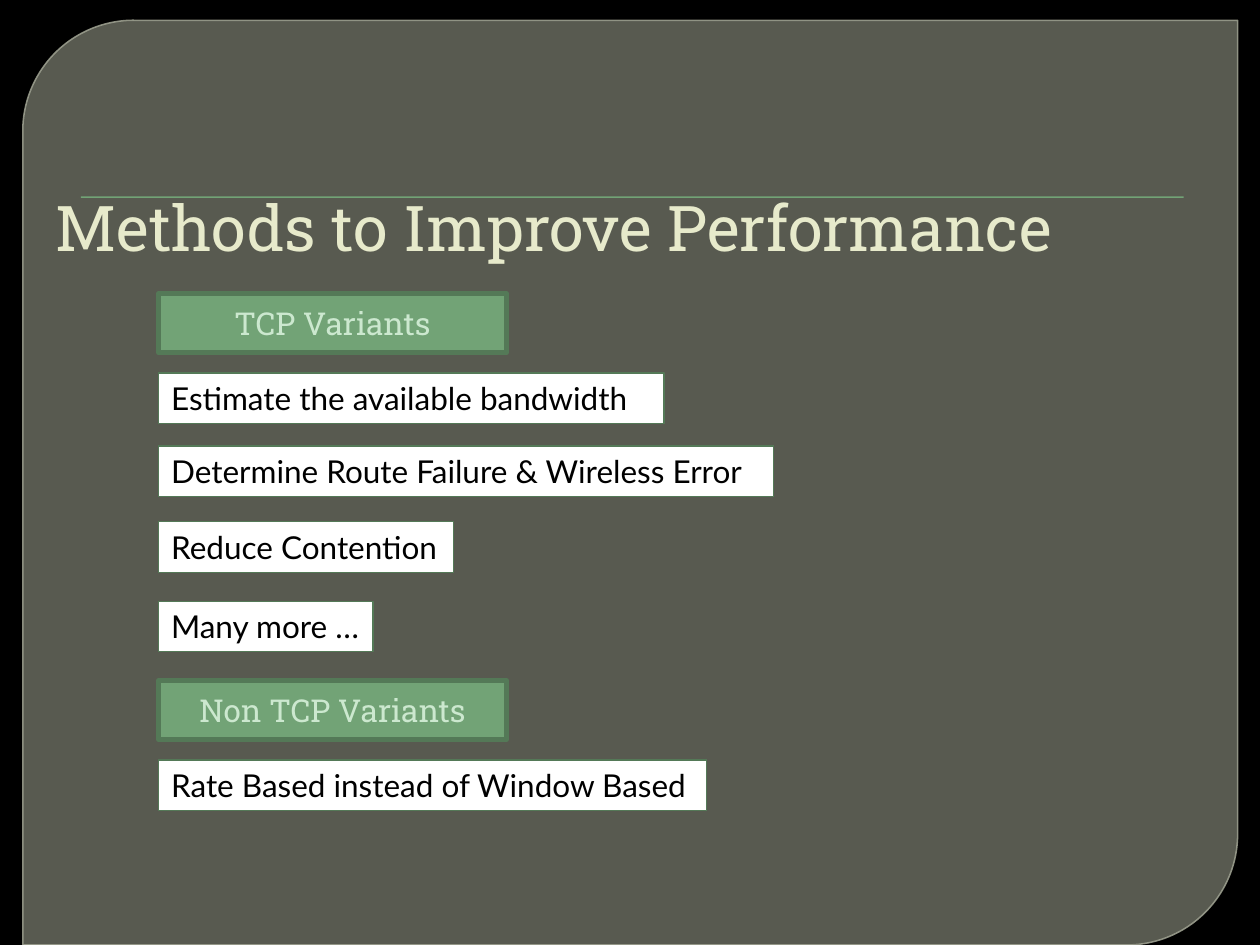
from lxml.etree import SubElement
from pptx import Presentation
from pptx.dml.color import RGBColor as Rgb
from pptx.enum.shapes import MSO_SHAPE as Shape
from pptx.enum.text import MSO_ANCHOR as Anchor, PP_ALIGN as Align
from pptx.oxml.ns import qn
from pptx.util import Cm, Pt

HUE = {
    "back": "000000", "panel": "888B7B", "edge": "9DA090", "title": "E7EACB",
    "green": "72A376", "dark": "547957", "pale": "CCE8CF",
    "item": "FFFFFF", "ink": "000000",
}
LEFT = 3.2
HEADS = [("TCP Variants", 5.92), ("Non TCP Variants", 13.72)]
ITEMS = [
    ("Estimate the available bandwidth", 7.52, 10.19),
    ("Determine Route Failure & Wireless Error", 8.99, 12.4),
    ("Reduce Contention", 10.52, 5.94),
    ("Many more …", 12.12, 4.32),
    ("Rate Based instead of Window Based", 15.32, 11.05),
]


def paint(fill, hue, alpha=None):
    """Give a fill a solid colour, with opacity in percent if named."""
    fill.solid()
    fill.fore_color.rgb = Rgb.from_string(HUE[hue])
    if alpha:
        node = fill._xPr.find(qn("a:solidFill"))[0]
        SubElement(node, qn("a:alpha")).set("val", str(alpha * 1000))


def add_box(slide, kind, area, hue, edge=None, width=0, alpha=(None, None)):
    """Add a flat filled shape and return it."""
    box = slide.shapes.add_shape(kind, *map(Cm, area))
    box.shadow.inherit = False
    paint(box.fill, hue, alpha[0])
    if edge:
        paint(box.line.fill, edge, alpha[1])
        box.line.width = Pt(width)
    else:
        box.line.fill.background()
    return box


def write(shape, text, font, size, hue, align=Align.LEFT, anchor=Anchor.TOP):
    """Set one line of text in a shape."""
    frame = shape.text_frame
    frame.word_wrap = True
    frame.vertical_anchor = anchor
    para = frame.paragraphs[0]
    para.alignment = align
    run = para.add_run()
    run.text = text
    run.font.name = font
    run.font.size = Pt(size)
    run.font.color.rgb = Rgb.from_string(HUE[hue])


def add_frame(slide):
    """Draw the backdrop, the panel and the rule."""
    paint(slide.background.fill, "back")
    panel = add_box(slide, Shape.ROUND_2_DIAG_RECTANGLE,
                    (0.46, 0.41, 24.49, 18.64), "panel", "edge", 0.87, (65, 88))
    panel.adjustments[0] = 0.12
    add_box(slide, Shape.RECTANGLE, (1.63, 3.96, 22.23, 0.03), "green")


def add_title(slide, text):
    """Place the title above the panel."""
    title = slide.shapes.title
    slide.shapes._spTree.append(title._element)
    title.left, title.top, title.width, title.height = map(
        Cm, (0.71, 3.12, 24.69, 2.34))
    title.text_frame.margin_left = Cm(0.41)
    write(title, text, "Roboto Slab", 36, "title", anchor=Anchor.BOTTOM)


def add_head(slide, text, top):
    """Add a green heading box."""
    box = add_box(slide, Shape.RECTANGLE, (LEFT, top, 7.01, 1.19),
                  "green", "dark", 3)
    write(box, text, "Roboto Slab", 18, "pale", Align.CENTER, Anchor.MIDDLE)


def add_item(slide, text, top, width):
    """Add a white box for one method."""
    box = add_box(slide, Shape.RECTANGLE, (LEFT, top, width, 1.02),
                  "item", "dark", 0.75)
    box.text_frame.margin_right = 0
    write(box, text, "Lato", 18, "ink")


def main():
    """Build and save the slide."""
    deck = Presentation()
    deck.slide_width, deck.slide_height = Cm(25.4), Cm(19.05)
    slide = deck.slides.add_slide(deck.slide_layouts[5])
    add_frame(slide)
    add_title(slide, "Methods to Improve Performance")
    for head in HEADS:
        add_head(slide, *head)
    for item in ITEMS:
        add_item(slide, *item)
    deck.save("out.pptx")


if __name__ == "__main__":
    main()
